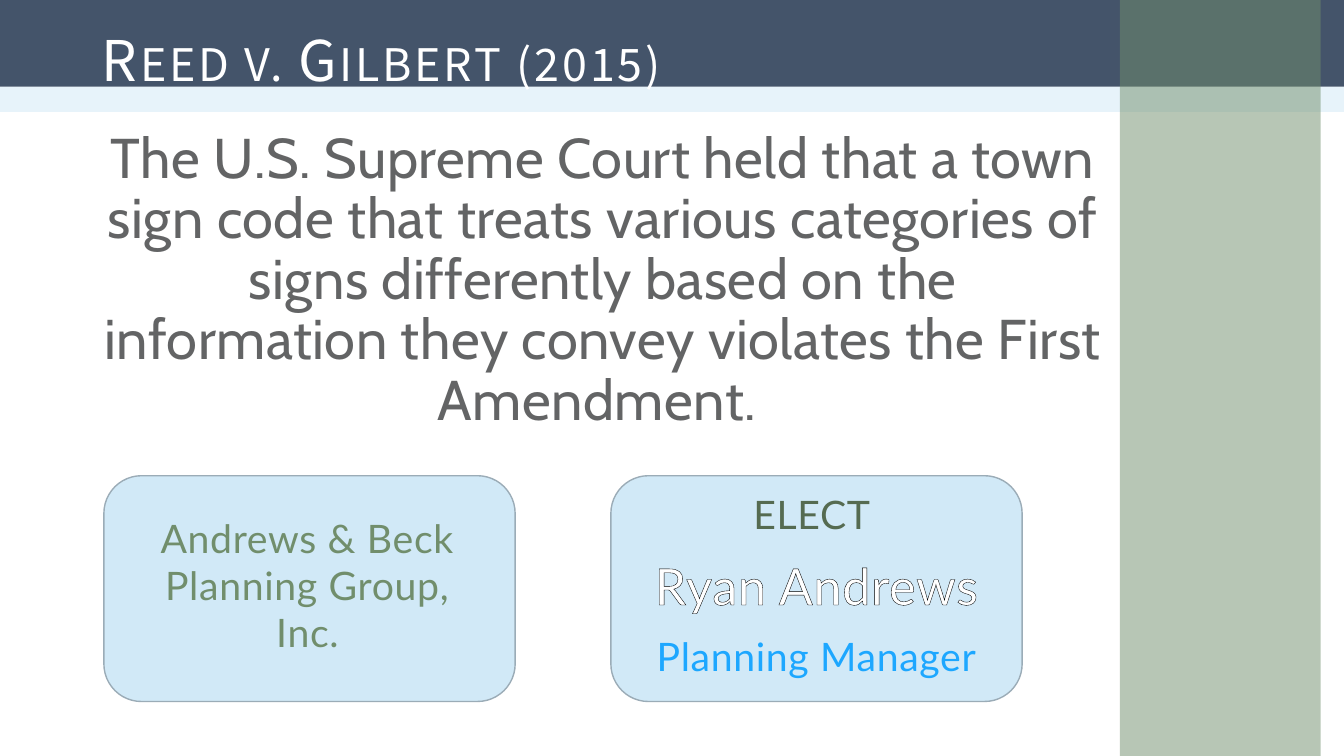
from pptx import Presentation
from pptx.dml.color import RGBColor
from pptx.enum.shapes import MSO_SHAPE as Preset
from pptx.enum.text import MSO_ANCHOR as Anchor, MSO_AUTO_SIZE as AutoSize, PP_ALIGN as Align
from pptx.oxml import parse_xml
from pptx.oxml.ns import nsdecls, qn
from pptx.util import Inches, Pt
from lxml.etree import SubElement

WIDTH, HEIGHT = Inches(13.33), Inches(7.5)
NAVY = RGBColor(0x44, 0x54, 0x6A)
PALE_BLUE = RGBColor(0xD1, 0xE9, 0xF7)
CARD_EDGE = RGBColor(0x9B, 0xAC, 0xB7)
SAGE = RGBColor(0x71, 0x8E, 0x6C)
DARK_SAGE = RGBColor(0x55, 0x6B, 0x51)
BRIGHT_BLUE = RGBColor(0x1D, 0xA7, 0xFF)
GREY = RGBColor(0x63, 0x64, 0x65)
WHITE = RGBColor(0xFF, 0xFF, 0xFF)

CARD_TOP, CARD_WIDTH, CARD_HEIGHT = 62.93, 30.6, 29.87
CARD_LEFTS = 7.73, 45.45


def area(left, top, width, height):
    return (int(WIDTH * left / 100), int(HEIGHT * top / 100),
            int(WIDTH * width / 100), int(HEIGHT * height / 100))


def move(shape, box):
    shape.left, shape.top, shape.width, shape.height = box


def add_panel(shapes, preset, box, color, edge=None):
    panel = shapes.add_shape(preset, *box)
    panel.shadow.inherit = False
    panel.fill.solid()
    panel.fill.fore_color.rgb = color
    if edge is None:
        panel.line.fill.background()
    else:
        panel.line.color.rgb = edge
        panel.line.width = Pt(1)
    return panel


def add_band(slide, box, color, opacity=100):
    band = add_panel(slide.shapes, Preset.RECTANGLE, box, color)
    if opacity < 100:
        tint = band.element.spPr.find(qn("a:solidFill"))[0]
        SubElement(tint, qn("a:alpha"), val=str(opacity * 1000))
    slide.shapes.title.element.addprevious(band.element)


def style(paragraph, font_name, size, color, spacing, align=Align.CENTER):
    paragraph.alignment = align
    paragraph.font.name = font_name
    paragraph.font.size = Pt(size)
    paragraph.font.color.rgb = color
    properties = paragraph._p.get_or_add_pPr().get_or_add_defRPr()
    properties.set("spc", str(int(spacing * 100)))
    return properties


def outline(properties):
    properties.insert(0, parse_xml(
        f'<a:ln {nsdecls("a")} w="9525"><a:solidFill>'
        '<a:srgbClr val="000000"/></a:solidFill></a:ln>'))


def fill_title(slide, text):
    title = slide.shapes.title
    move(title, area(6.83, 2.4, 86.25, 11.87))
    frame = title.text_frame
    frame.text = text
    frame.auto_size = AutoSize.NONE
    frame.vertical_anchor = Anchor.MIDDLE
    paragraph = frame.paragraphs[0]
    paragraph.line_spacing = 0.9
    style(paragraph, "Noto Sans CJK KR", 40, WHITE, 2, Align.LEFT).set("cap", "small")


def fill_body(slide, text):
    body = slide.placeholders[1]
    move(body, area(6.9, 16.53, 76.05, 44.4))
    frame = body.text_frame
    frame.text = text
    frame.auto_size = AutoSize.NONE
    paragraph = frame.paragraphs[0]
    paragraph.line_spacing = 0.9
    paragraph.space_before = Pt(10)
    properties = paragraph._p.get_or_add_pPr()
    properties.set("marL", "0")
    properties.set("indent", "0")
    style(paragraph, "Cabin", 40, GREY, 0.4)
    properties.find(qn("a:defRPr")).addprevious(parse_xml(f'<a:buNone {nsdecls("a")}/>'))


def add_sign(slide, left, text_box, lines, gap=0):
    sign = slide.shapes.add_group_shape()
    add_panel(sign.shapes, Preset.ROUNDED_RECTANGLE,
              area(left, CARD_TOP, CARD_WIDTH, CARD_HEIGHT), PALE_BLUE, CARD_EDGE)
    frame = sign.shapes.add_textbox(*text_box).text_frame
    frame.word_wrap = True
    frame.auto_size = AutoSize.SHAPE_TO_FIT_TEXT
    for index, (text, size, color) in enumerate(lines):
        paragraph = frame.add_paragraph() if index else frame.paragraphs[0]
        paragraph.text = text
        paragraph.space_after = Pt(gap)
        outline(style(paragraph, "Lato", size, color, 0.5))


def main():
    presentation = Presentation()
    presentation.slide_width, presentation.slide_height = WIDTH, HEIGHT
    slide = presentation.slides.add_slide(presentation.slide_layouts[1])
    add_band(slide, area(0, 11.47, 100, 3.33), PALE_BLUE, 50)
    add_band(slide, area(0, 0, 100, 11.47), NAVY)
    add_band(slide, area(83.33, 0, 14.93, 100), SAGE, 50)
    fill_title(slide, "Reed v. Gilbert (2015)")
    fill_body(slide, "The U.S. Supreme Court held that a town sign code that treats "
                     "various categories of signs differently based on the information "
                     "they convey violates the First Amendment. ")
    business_left, campaign_left = CARD_LEFTS
    add_sign(slide, business_left, area(9.23, 67.33, 27.3, 20.13),
             [("Andrews & Beck Planning Group, Inc.", 28, SAGE)])
    add_sign(slide, campaign_left, area(campaign_left, 64.27, CARD_WIDTH, 26.53),
             [("ELECT ", 28, DARK_SAGE),
              ("Ryan Andrews", 36, WHITE),
              ("Planning Manager", 28, BRIGHT_BLUE)], gap=12)
    presentation.save("out.pptx")


if __name__ == "__main__":
    main()
